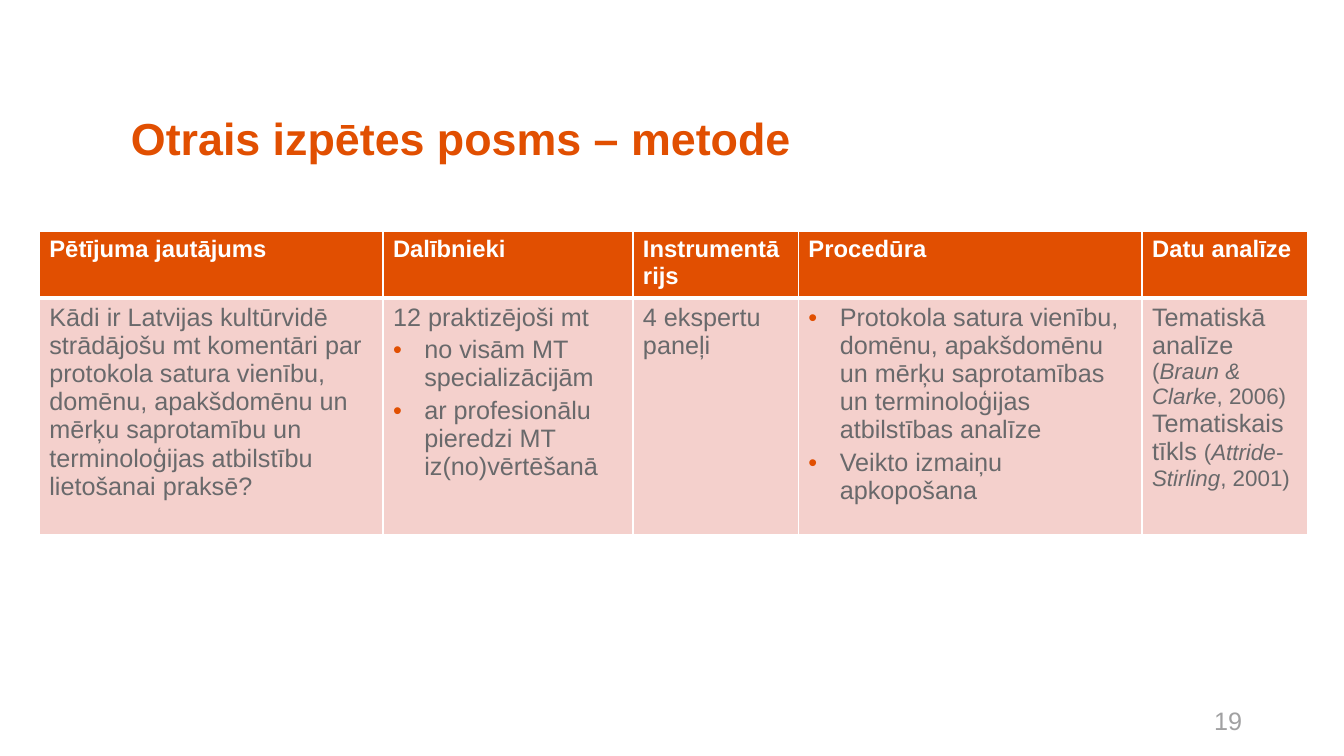
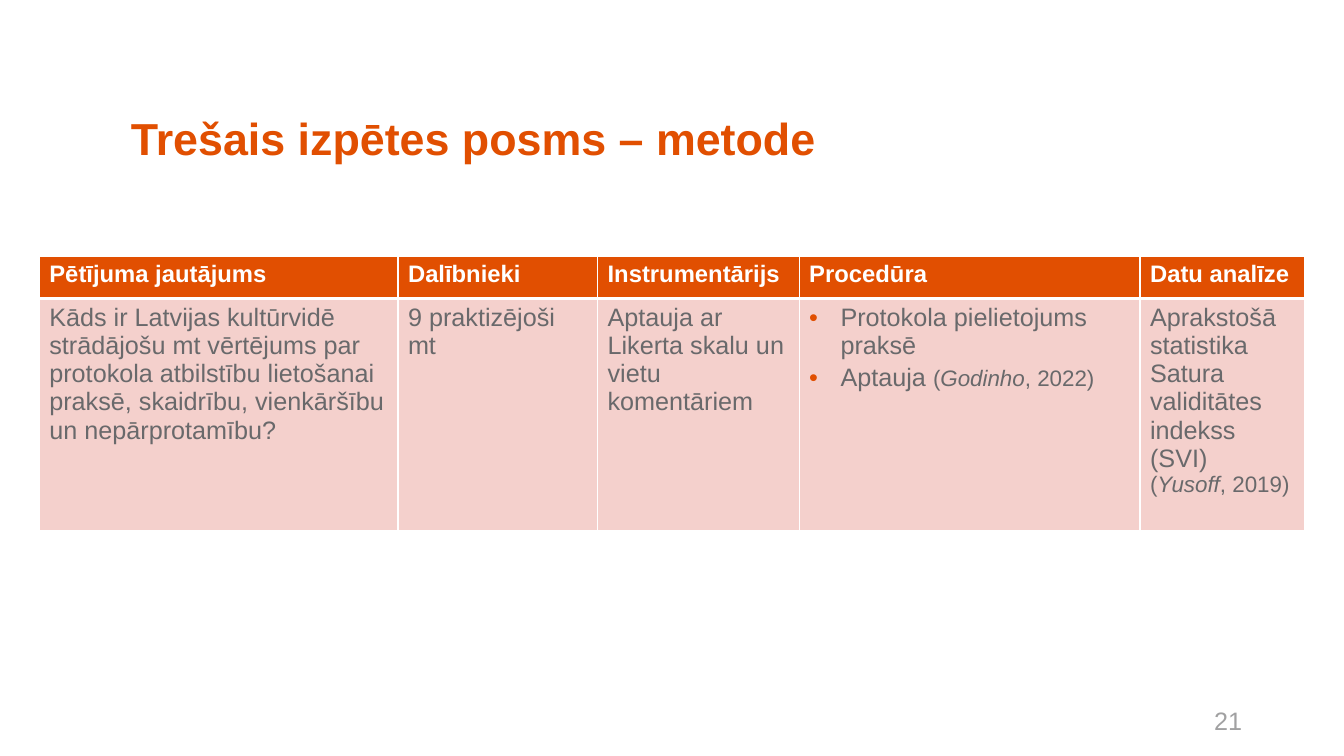
from dataclasses import dataclass

from lxml.etree import SubElement
from pptx import Presentation
from pptx.dml.color import RGBColor
from pptx.enum.text import MSO_ANCHOR, PP_ALIGN
from pptx.oxml.ns import qn
from pptx.util import Cm, Pt


@dataclass(frozen=True)
class Theme:
    font: str = "Arial"
    accent: str = "E14F01"
    tint: str = "F4D0CC"
    text: str = "69696B"
    muted: str = "A1A1A2"
    white: str = "FFFFFF"
    title: int = 32
    header: int = 17
    body: int = 18
    cite: int = 16


@dataclass(frozen=True)
class Cite:
    author: str
    year: int


@dataclass(frozen=True)
class Bullet:
    content: tuple


T = Theme()
HEADERS = ["Pētījuma jautājums", "Dalībnieki", "Instrumentārijs", "Procedūra", "Datu analīze"]
SLIDES = [
    {
        "title": "Otrais izpētes posms – metode",
        "number": "19",
        "top": 5.82,
        "cols": [8.66, 6.3, 4.17, 8.66, 4.17],
        "rows": [1.6, 5.95],
        "cells": [
            [("Kādi ir Latvijas kultūrvidē strādājošu mt komentāri par protokola satura vienību, "
              "domēnu, apakšdomēnu un mērķu saprotamību un terminoloģijas atbilstību "
              "lietošanai praksē?",)],
            [("12 praktizējoši mt",),
             Bullet(("no visām MT specializācijām",)),
             Bullet(("ar profesionālu pieredzi MT iz(no)vērtēšanā",))],
            [("4 ekspertu paneļi",)],
            [Bullet(("Protokola satura vienību, domēnu, apakšdomēnu un mērķu saprotamības "
                     "un terminoloģijas atbilstības analīze",)),
             Bullet(("Veikto izmaiņu apkopošana",))],
            [("Tematiskā analīze",),
             (Cite("Braun & Clarke", 2006),),
             ("Tematiskais tīkls ", Cite("Attride-Stirling", 2001))],
        ],
    },
    {
        "title": "Trešais izpētes posms – metode",
        "number": "21",
        "top": 6.45,
        "cols": [9.04, 5.03, 5.08, 8.59, 4.14],
        "rows": [1.07, 5.85],
        "cells": [
            [("Kāds ir Latvijas kultūrvidē strādājošu mt vērtējums par protokola atbilstību "
              "lietošanai praksē, skaidrību, vienkāršību un nepārprotamību?",)],
            [("9 praktizējoši mt",)],
            [("Aptauja ar Likerta skalu un vietu komentāriem",)],
            [Bullet(("Protokola pielietojums praksē",)),
             Bullet(("Aptauja ", Cite("Godinho", 2022)))],
            [("Aprakstošā statistika",),
             ("Satura validitātes indekss (SVI)",),
             (Cite("Yusoff", 2019),)],
        ],
    },
]


def add_run(p, text, size, color, bold=False, italic=False):
    r = p.add_run()
    r.text = text
    r.font.name = T.font
    r.font.size = Pt(size)
    r.font.bold = bold
    r.font.italic = italic
    r.font.color.rgb = RGBColor.from_string(color)


def add_label(s, box, text, size, color, bold=False, align=PP_ALIGN.LEFT, spacing=1.0):
    tf = s.shapes.add_textbox(*map(Cm, box)).text_frame
    tf.word_wrap = True
    tf.vertical_anchor = MSO_ANCHOR.MIDDLE
    p = tf.paragraphs[0]
    p.alignment = align
    p.line_spacing = spacing
    add_run(p, text, size, color, bold)


def set_bullet(p):
    pPr = p._p.get_or_add_pPr()
    pPr.set("marL", str(Cm(0.79)))
    pPr.set("indent", str(-Cm(0.79)))
    SubElement(SubElement(pPr, qn("a:buClr")), qn("a:srgbClr"), val=T.accent)
    SubElement(pPr, qn("a:buFont"), typeface=T.font)
    SubElement(pPr, qn("a:buChar"), char="•")


def style_cell(cell, fill, top, bottom):
    tcPr = cell._tc.get_or_add_tcPr()
    for side, width in (("L", 1), ("R", 1), ("T", top), ("B", bottom)):
        ln = SubElement(tcPr, qn(f"a:ln{side}"), w=str(Pt(width)))
        SubElement(SubElement(ln, qn("a:solidFill")), qn("a:srgbClr"), val=T.white)
    cell.fill.solid()
    cell.fill.fore_color.rgb = RGBColor.from_string(fill)


def fill_body(tf, paragraphs):
    for i, item in enumerate(paragraphs):
        p = tf.add_paragraph() if i else tf.paragraphs[0]
        bulleted = isinstance(item, Bullet)
        if bulleted:
            set_bullet(p)
            if i:
                p.space_before = Pt(3)
        for piece in item.content if bulleted else item:
            if isinstance(piece, Cite):
                add_run(p, "(", T.cite, T.text)
                add_run(p, piece.author, T.cite, T.text, italic=True)
                add_run(p, f", {piece.year})", T.cite, T.text)
            else:
                add_run(p, piece, T.body, T.text)


def add_method_table(s, data):
    cols, rows = data["cols"], data["rows"]
    box = (0.99, data["top"], sum(cols), sum(rows))
    table = s.shapes.add_table(len(rows), len(cols), *map(Cm, box)).table
    for row, height in zip(table.rows, rows):
        row.height = Cm(height)
    for i, (width, header, paragraphs) in enumerate(zip(cols, HEADERS, data["cells"])):
        table.columns[i].width = Cm(width)
        head, body = table.cell(0, i), table.cell(1, i)
        style_cell(head, T.accent, 1, 3)
        style_cell(body, T.tint, 3, 1)
        add_run(head.text_frame.paragraphs[0], header, T.header, T.white, bold=True)
        fill_body(body.text_frame, paragraphs)


def main():
    prs = Presentation()
    prs.slide_width, prs.slide_height = Cm(33.87), Cm(19.05)
    for data in SLIDES:
        s = prs.slides.add_slide(prs.slide_layouts[6])
        add_label(s, (3.05, 2.54, 25.4, 2.03), data["title"], T.title, T.accent,
                  bold=True, spacing=0.9)
        add_method_table(s, data)
        add_label(s, (23.93, 17.65, 7.62, 1.02), data["number"], T.body, T.muted,
                  align=PP_ALIGN.RIGHT)
    prs.save("out.pptx")


if __name__ == "__main__":
    main()
